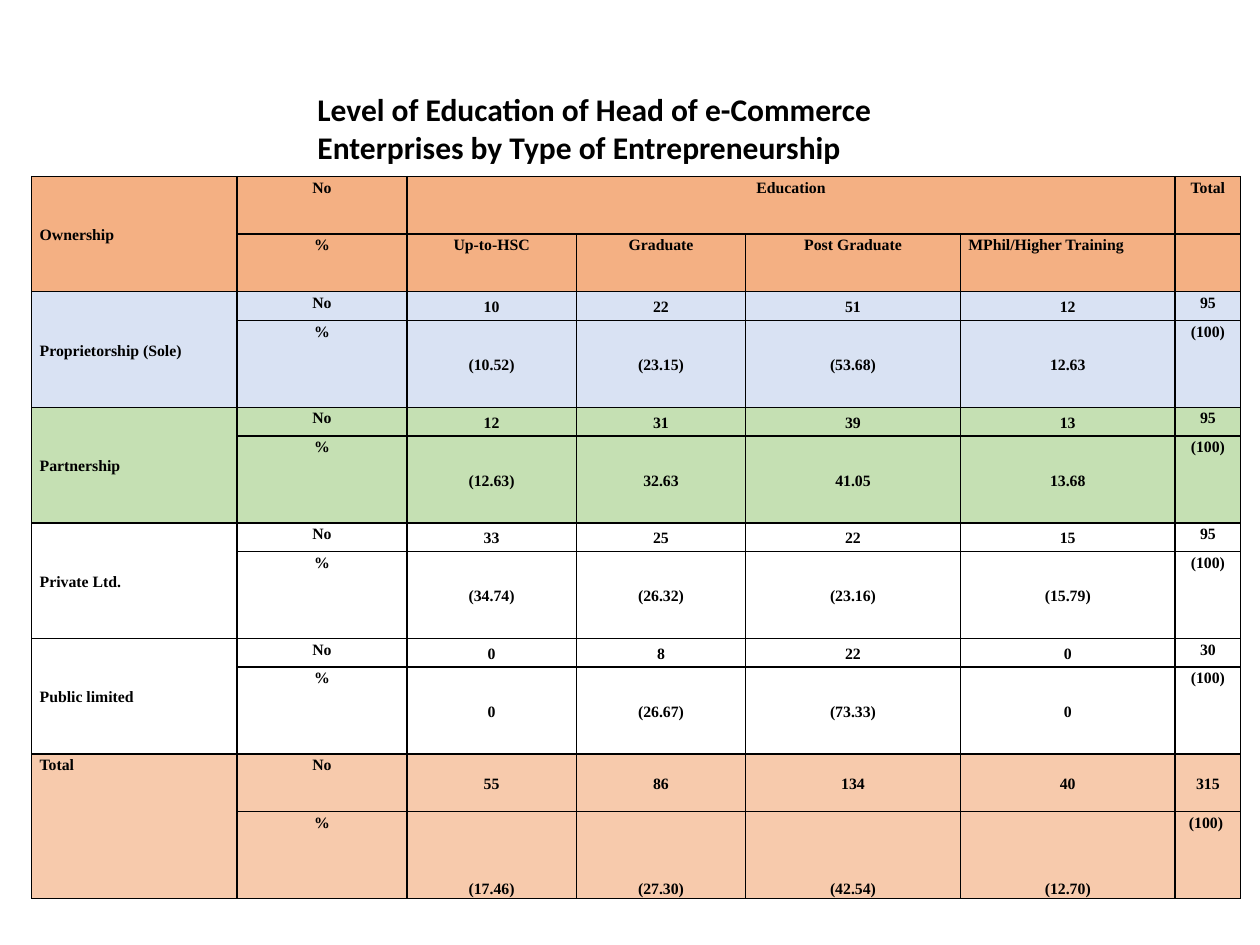
from lxml import etree
from pptx import Presentation
from pptx import util as u
from pptx.dml.color import RGBColor
from pptx.enum import text
from pptx.oxml.ns import qn

COLORS = {"ink": "000000", "header": "F4B083", "sole": "D9E2F3",
          "partner": "C5E0B3", "total": "F7CAAC", "plain": None}
TITLE = "Level of Education of Head of e-Commerce Enterprises by Type of Entrepreneurship"
COL_WIDTHS = [4.14, 3.42, 3.42, 3.41, 4.33, 4.33, 1.32]
GROUPS = [
    ("header", 1.16, 1.16, ["Ownership", "No", "Education", "", "", "", "Total"],
     ["%", "Up-to-HSC", "Graduate", "Post Graduate", "MPhil/Higher Training", ""]),
    ("sole", 0.58, 1.75, ["Proprietorship (Sole)", "No", "10", "22", "51", "12", "95"],
     ["%", "(10.52)", "(23.15)", "(53.68)", "12.63", "(100)"]),
    ("partner", 0.58, 1.75, ["Partnership", "No", "12", "31", "39", "13", "95"],
     ["%", "(12.63)", "32.63", "41.05", "13.68", "(100)"]),
    ("plain", 0.58, 1.75, ["Private Ltd.", "No", "33", "25", "22", "15", "95"],
     ["%", "(34.74)", "(26.32)", "(23.16)", "(15.79)", "(100)"]),
    ("plain", 0.58, 1.75, ["Public limited", "No", "0", "8", "22", "0", "30"],
     ["%", "0", "(26.67)", "(73.33)", "0", "(100)"]),
    ("total", 1.16, 1.75, ["Total", "No", "55", "86", "134", "40", "315"],
     ["%", "(17.46)", "(27.30)", "(42.54)", "(12.70)", "(100) "]),
]


def style_run(r, font, size):
    """Apply the bold dark lettering used everywhere."""
    r.font.name = font
    r.font.size = u.Pt(size)
    r.font.bold = True
    r.font.color.rgb = RGBColor.from_string(COLORS["ink"])


def add_borders(cell):
    """Draw a thin solid line on all four sides of a cell."""
    pr = cell._tc.get_or_add_tcPr()
    for i, side in enumerate(("a:lnL", "a:lnR", "a:lnT", "a:lnB")):
        ln = etree.Element(qn(side), w=str(u.Pt(1)))
        fill = etree.SubElement(ln, qn("a:solidFill"))
        etree.SubElement(fill, qn("a:srgbClr"), val=COLORS["ink"])
        pr.insert(i, ln)


def format_cell(cell, value, color, align, anchor):
    """Fill, border and letter one table cell."""
    cell.margin_left = cell.margin_right = u.Cm(0.16)
    cell.margin_top = cell.margin_bottom = 0
    cell.vertical_anchor = anchor
    if color:
        cell.fill.solid()
        cell.fill.fore_color.rgb = RGBColor.from_string(color)
    else:
        cell.fill.background()
    add_borders(cell)
    if value:
        p = cell.text_frame.paragraphs[0]
        p.text = value
        p.alignment = align
        p.line_spacing = 1.15
        style_run(p.runs[0], "Times New Roman", 9)


def cell_anchor(kind, row, col):
    """Return the vertical anchor of a cell within its two-row group."""
    a = text.MSO_ANCHOR
    if col == 0:
        return a.TOP if kind == "total" else a.MIDDLE
    if kind == "header" or col == 1:
        return a.TOP
    if kind == "total":
        return a.BOTTOM if row and col < 6 else a.TOP if row else a.MIDDLE
    return a.TOP if col == 6 else a.MIDDLE


def add_title(s):
    """Add the bold slide title."""
    sp = s.shapes.add_textbox(u.Cm(6.15), u.Cm(1.7), u.Cm(12.7), u.Cm(1.8))
    tf = sp.text_frame
    tf.word_wrap = True
    tf.auto_size = text.MSO_AUTO_SIZE.SHAPE_TO_FIT_TEXT
    tf.text = TITLE
    style_run(tf.paragraphs[0].runs[0], "Calibri", 18)


def add_education_table(s):
    """Add the table of ownership groups by education level."""
    heights = [h for g in GROUPS for h in g[1:3]]
    sp = s.shapes.add_table(len(heights), len(COL_WIDTHS), u.Cm(0.64), u.Cm(3.56),
                            u.Cm(sum(COL_WIDTHS)), u.Cm(sum(heights)))
    table = sp.table
    table.first_row = table.horz_banding = False
    for column, width in zip(table.columns, COL_WIDTHS):
        column.width = u.Cm(width)
    for row, height in zip(table.rows, heights):
        row.height = u.Cm(height)
    for g, (kind, _, _, counts, shares) in enumerate(GROUPS):
        for i, values in enumerate((counts, [""] + shares)):
            for j, value in enumerate(values):
                left = j == 0 or value.startswith("MPhil")
                align = text.PP_ALIGN.LEFT if left else text.PP_ALIGN.CENTER
                format_cell(table.cell(2 * g + i, j), value, COLORS[kind],
                            align, cell_anchor(kind, i, j))
        table.cell(2 * g, 0).merge(table.cell(2 * g + 1, 0))
    table.cell(0, 2).merge(table.cell(0, 5))


def main():
    """Build and save the slide."""
    prs = Presentation()
    prs.slide_width, prs.slide_height = u.Cm(25.4), u.Cm(19.05)
    s = prs.slides.add_slide(prs.slide_layouts[6])
    add_education_table(s)
    add_title(s)
    prs.save("out.pptx")


if __name__ == "__main__":
    main()
